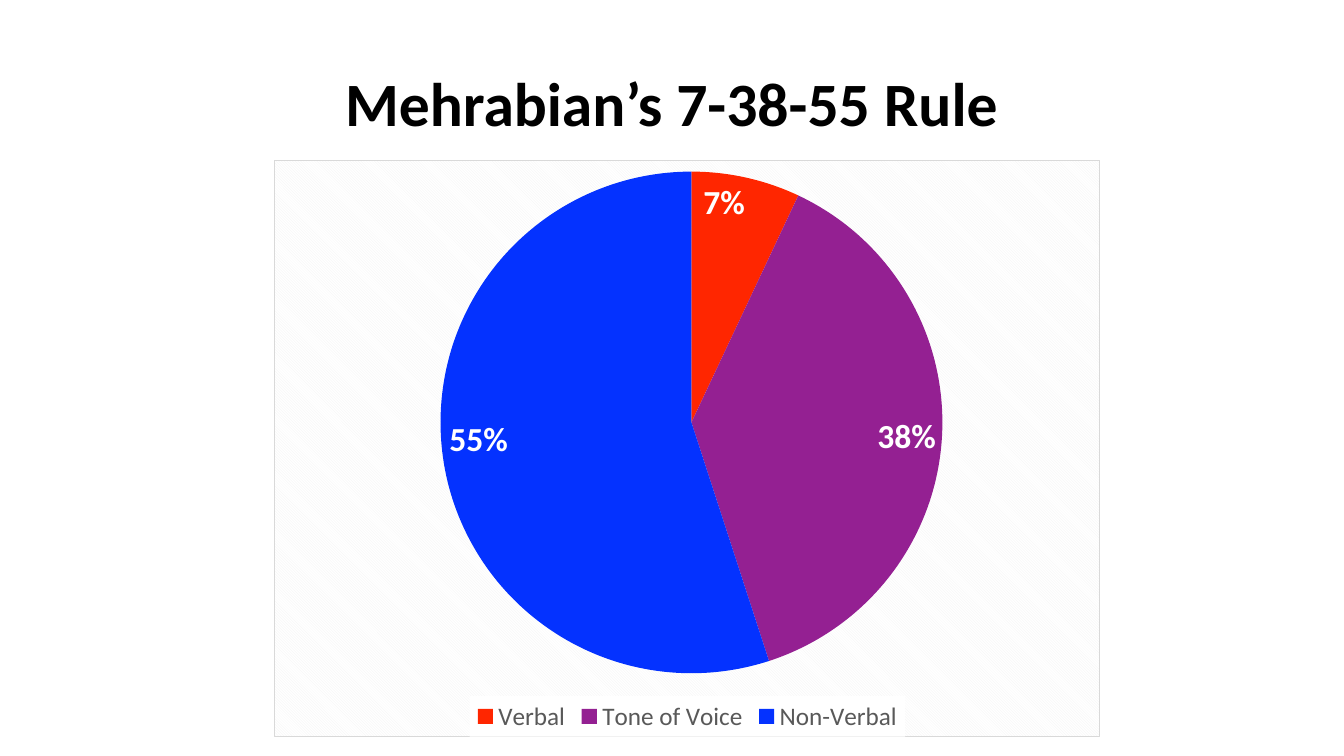
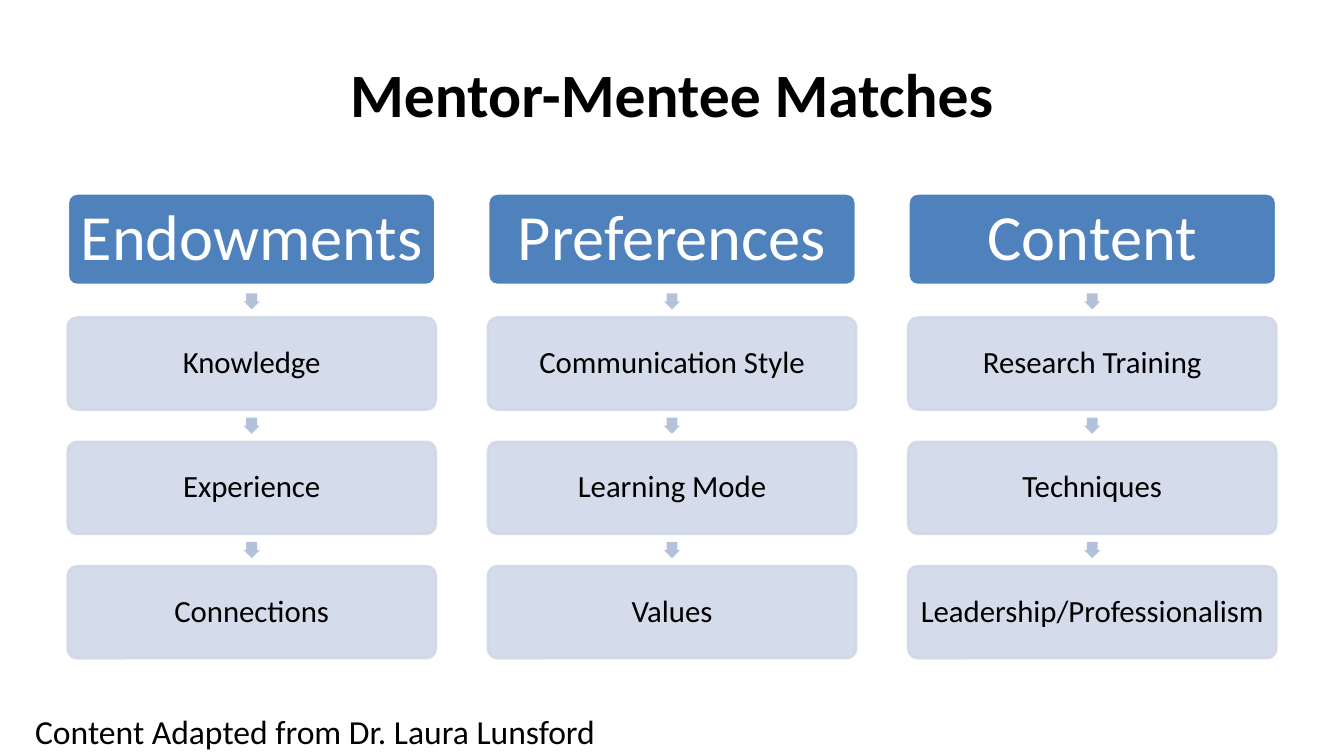
from lxml import etree
from pptx import Presentation
from pptx.chart.data import CategoryChartData
from pptx.dml.color import RGBColor
from pptx.enum.chart import XL_CHART_TYPE, XL_LABEL_POSITION, XL_LEGEND_POSITION
from pptx.enum.shapes import MSO_SHAPE
from pptx.enum.text import MSO_ANCHOR, PP_ALIGN
from pptx.oxml import parse_xml
from pptx.oxml.ns import nsdecls, qn
from pptx.util import Pt

PIE = XL_CHART_TYPE.PIE
INSIDE_END = XL_LABEL_POSITION.INSIDE_END
LEGEND_BOTTOM = XL_LEGEND_POSITION.BOTTOM
ROUNDED = MSO_SHAPE.ROUNDED_RECTANGLE
DOWN_ARROW = MSO_SHAPE.DOWN_ARROW
MIDDLE = MSO_ANCHOR.MIDDLE
CENTER = PP_ALIGN.CENTER

FONT = "Calibri"
TITLE_ONLY = 5
COLORS = {
    "text": "000000",
    "white": "FFFFFF",
    "legend": "595959",
    "border": "D9D9D9",
    "stripe": "F2F2F2",
    "header": "4F81BD",
    "item": "D0D8E8",
    "arrow": "B3C1DB",
    "verbal": "FF2600",
    "tone": "942092",
    "non_verbal": "0432FF",
}

# Flow grid, in points
SLIDE_WIDTH, SLIDE_HEIGHT = 960, 540
BOX_WIDTH, BOX_HEIGHT = 262.8, 65.6
GRID_LEFT, GRID_TOP = 48.4, 138.1
COLUMN_STEP = (SLIDE_WIDTH - 2 * GRID_LEFT - BOX_WIDTH) / 2
ROW_STEP = 88.8
ARROW_SIZE = 11.5


def rgb(name):
    return RGBColor.from_string(COLORS[name])


def style_font(font, size, color, bold=False):
    font.name = FONT
    font.size = Pt(size)
    font.bold = bold
    font.color.rgb = rgb(color)


def add_run(paragraph, text, size, color="text", bold=False):
    run = paragraph.add_run()
    run.text = text
    style_font(run.font, size, color, bold)


def set_alpha(fill_parent, percent):
    """Make the solid fill inside an element partly transparent."""
    color = fill_parent.find(qn("a:solidFill"))[0]
    etree.SubElement(color, qn("a:alpha")).set("val", str(percent * 1000))


def add_titled_slide(presentation, title, left, top, width):
    slide = presentation.slides.add_slide(presentation.slide_layouts[TITLE_ONLY])
    shape = slide.shapes.title
    shape.left, shape.top, shape.width, shape.height = Pt(left), Pt(top), Pt(width), Pt(90)
    shape.text_frame.vertical_anchor = MIDDLE
    paragraph = shape.text_frame.paragraphs[0]
    paragraph.alignment = CENTER
    add_run(paragraph, title, 44, bold=True)
    return slide


def add_plain_shape(slide, kind, left, top, width, height, fill):
    shape = slide.shapes.add_shape(kind, Pt(left), Pt(top), Pt(width), Pt(height))
    shape.shadow.inherit = False
    shape.fill.solid()
    shape.fill.fore_color.rgb = rgb(fill)
    shape.line.fill.background()
    return shape


def add_box(slide, text, left, top, is_header):
    fill, line, color, size, margin = (
        ("header", "white", "white", 46, 6) if is_header else ("item", "item", "text", 22, 4)
    )
    box = add_plain_shape(slide, ROUNDED, left, top, BOX_WIDTH, BOX_HEIGHT, fill)
    box.adjustments[0] = 0.1
    box.line.color.rgb = rgb(line)
    box.line.width = Pt(2)
    if not is_header:
        properties = box.fill._xPr
        set_alpha(properties, 90)
        set_alpha(properties.find(qn("a:ln")), 90)
    frame = box.text_frame
    frame.word_wrap = True
    frame.vertical_anchor = MIDDLE
    frame.margin_left = frame.margin_right = Pt(margin)
    frame.margin_top = frame.margin_bottom = Pt(margin)
    paragraph = frame.paragraphs[0]
    paragraph.alignment = CENTER
    paragraph.line_spacing = 0.9
    add_run(paragraph, text, size, color)


def add_flow_column(slide, left, texts):
    """Header box on top, items below, an arrow centred in each gap."""
    gap = ROW_STEP - BOX_HEIGHT
    for row, text in enumerate(texts):
        top = GRID_TOP + row * ROW_STEP
        if row:
            add_plain_shape(
                slide, DOWN_ARROW,
                left + (BOX_WIDTH - ARROW_SIZE) / 2, top - (gap + ARROW_SIZE) / 2,
                ARROW_SIZE, ARROW_SIZE, "arrow",
            ).adjustments[0] = 0.67
        add_box(slide, text, left, top, is_header=row == 0)


def format_chart_area(chart):
    """Hatched background, thin border and a white legend plate."""
    area = parse_xml(
        f'<c:spPr {nsdecls("c", "a")}><a:pattFill prst="dkDnDiag">'
        f'<a:fgClr><a:srgbClr val="{COLORS["stripe"]}"/></a:fgClr>'
        f'<a:bgClr><a:srgbClr val="{COLORS["white"]}"/></a:bgClr></a:pattFill>'
        f'<a:ln w="{Pt(0.75)}"><a:solidFill><a:srgbClr val="{COLORS["border"]}"/>'
        "</a:solidFill></a:ln></c:spPr>"
    )
    chart._chartSpace.find(qn("c:txPr")).addprevious(area)
    plate = parse_xml(
        f'<c:spPr {nsdecls("c", "a")}><a:solidFill>'
        f'<a:srgbClr val="{COLORS["white"]}"/></a:solidFill></c:spPr>'
    )
    chart.legend._element.find(qn("c:txPr")).addprevious(plate)


def set_plot_layout(chart, x, y, w, h):
    plot_area = chart._chartSpace.chart.plotArea
    for layout in plot_area.findall(qn("c:layout")):
        plot_area.remove(layout)
    sizes = "".join(
        f'<c:{tag} val="{value}"/>' for tag, value in zip("xywh", (x, y, w, h))
    )
    plot_area.insert(0, parse_xml(
        f'<c:layout {nsdecls("c")}><c:manualLayout><c:layoutTarget val="inner"/>'
        f'<c:xMode val="edge"/><c:yMode val="edge"/>{sizes}</c:manualLayout></c:layout>'
    ))


def add_pie(slide, left, top, width, height, slices):
    data = CategoryChartData()
    data.categories = [name for name, _, _ in slices]
    data.add_series("Series 1", [value for _, value, _ in slices])
    chart = slide.shapes.add_chart(
        PIE, Pt(left), Pt(top), Pt(width), Pt(height), data
    ).chart
    chart.has_title = False
    style_font(chart.font, 10, "text")

    # Legend
    chart.has_legend = True
    chart.legend.position = LEGEND_BOTTOM
    chart.legend.include_in_layout = False
    style_font(chart.legend.font, 18, "legend")

    # Slices and labels
    plot = chart.plots[0]
    plot.vary_by_categories = True
    for index, (_, _, color) in enumerate(slices):
        fill = plot.series[0].points[index].format.fill
        fill.solid()
        fill.fore_color.rgb = rgb(color)
    labels = plot.series[0].data_labels
    labels.show_value = False
    labels.show_percentage = True
    labels.number_format = "0%"
    labels.number_format_is_linked = False
    labels.position = INSIDE_END
    style_font(labels.font, 24, "white", bold=True)

    format_chart_area(chart)
    set_plot_layout(chart, 0.2, 0.02, 0.61, 0.87)


def add_credit(slide, text):
    frame = slide.shapes.add_textbox(Pt(18), Pt(504), Pt(418), Pt(36)).text_frame
    frame.word_wrap = False
    add_run(frame.paragraphs[0], text, 24)


def main():
    presentation = Presentation()
    presentation.slide_width = Pt(SLIDE_WIDTH)
    presentation.slide_height = Pt(SLIDE_HEIGHT)

    # Pie of the three message channels
    slide = add_titled_slide(presentation, "Mehrabian’s 7-38-55 Rule", 174, 27.4, 612)
    add_pie(slide, 196, 114, 590, 412.6, [
        ("Verbal", 7, "verbal"),
        ("Tone of Voice", 38, "tone"),
        ("Non-Verbal", 55, "non_verbal"),
    ])

    # Three columns of matching criteria
    slide = add_titled_slide(presentation, "Mentor-Mentee Matches", 48, 21.6, 864)
    columns = [
        ("Endowments", "Knowledge", "Experience", "Connections"),
        ("Preferences", "Communication Style", "Learning Mode", "Values"),
        ("Content", "Research Training", "Techniques", "Leadership/Professionalism"),
    ]
    for index, texts in enumerate(columns):
        add_flow_column(slide, GRID_LEFT + index * COLUMN_STEP, texts)
    add_credit(slide, "Content Adapted from Dr. Laura Lunsford")

    presentation.save("out.pptx")


if __name__ == "__main__":
    main()
